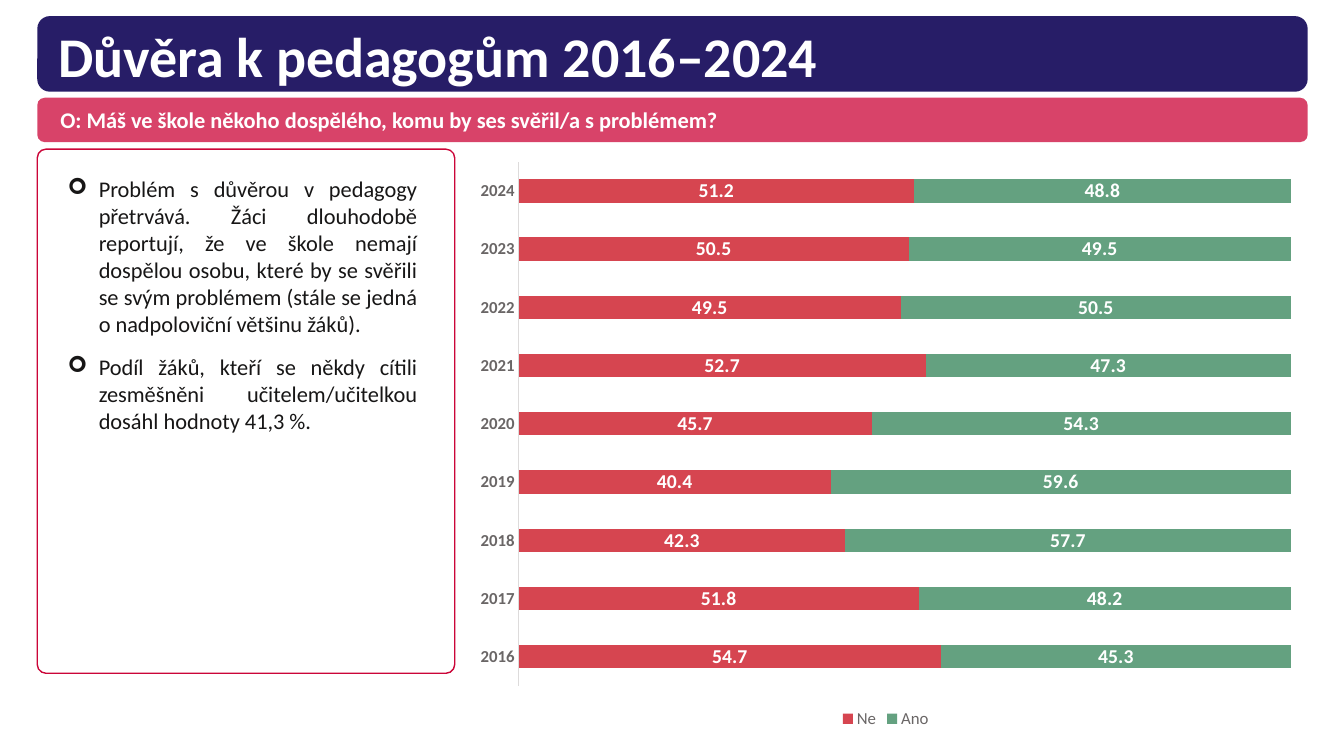
"""Build the slide on pupils' trust in teachers, 2016–2024."""
from lxml import etree
from pptx import Presentation
from pptx.chart.data import CategoryChartData
from pptx.dml.color import RGBColor
from pptx.enum import chart as charts, shapes, text
from pptx.oxml.ns import qn
from pptx.util import Inches, Pt

NAVY = RGBColor(0x27, 0x1D, 0x67)
CRIMSON = RGBColor(0xCB, 0x05, 0x38)
WHITE = RGBColor(0xFF, 0xFF, 0xFF)
INK = RGBColor(0x17, 0x16, 0x16)
GREY = RGBColor(0x6A, 0x66, 0x66)
AXIS_GREY = RGBColor(0xDD, 0xDB, 0xDB)
RED = RGBColor(0xD6, 0x45, 0x50)
GREEN = RGBColor(0x64, 0xA1, 0x80)

YEARS = range(2016, 2025)
ANSWERS = [
    ("Ne", RED, [54.7, 51.8, 42.3, 40.4, 45.7, 52.7, 49.5, 50.5, 51.2]),
    ("Ano", GREEN, [45.3, 48.2, 57.7, 59.6, 54.3, 47.3, 50.5, 49.5, 48.8]),
]
FINDINGS = [
    "Problém s důvěrou v pedagogy přetrvává. Žáci dlouhodobě reportují, že ve škole "
    "nemají dospělou osobu, které by se svěřili se svým problémem (stále se jedná "
    "o nadpoloviční většinu žáků).",
    "Podíl žáků, kteří se někdy cítili zesměšněni učitelem/učitelkou dosáhl hodnoty 41,3 %.",
]


def style_font(font, size, color, bold=False):
    font.name, font.size, font.bold = "Calibri", Pt(size), bold
    font.color.rgb = color


def add_panel(top, width, height, fill):
    panel = slide.shapes.add_shape(
        shapes.MSO_SHAPE.ROUNDED_RECTANGLE,
        Inches(0.37), Inches(top), Inches(width), Inches(height))
    panel.shadow.inherit = False
    panel.fill.solid()
    panel.fill.fore_color.rgb = fill
    panel.line.fill.background()
    return panel


presentation = Presentation()
presentation.slide_width, presentation.slide_height = Inches(13.33), Inches(7.5)
slide = presentation.slides.add_slide(presentation.slide_layouts[5])

question_band = add_panel(0.97, 12.6, 0.44, CRIMSON)
band_color = question_band.fill._xPr.find(qn("a:solidFill"))[0]
etree.SubElement(band_color, qn("a:alpha"), val="75000")
add_panel(0.16, 12.6, 0.75, NAVY)
findings_panel = add_panel(1.48, 4.14, 5.2, WHITE)
findings_panel.adjustments[0] = 0.021
findings_panel.line.color.rgb = CRIMSON
findings_panel.line.width = Pt(1)

title = slide.shapes.title
slide.shapes._spTree.append(title._element)
title.left, title.top, title.width, title.height = map(Inches, (0.48, 0.24, 11.5, 0.54))
title.text_frame.text = "Důvěra k pedagogům 2016–2024"
title.text_frame.vertical_anchor = text.MSO_ANCHOR.TOP
title.text_frame.auto_size = text.MSO_AUTO_SIZE.NONE
paragraph = title.text_frame.paragraphs[0]
paragraph.alignment = text.PP_ALIGN.LEFT
paragraph.line_spacing = 0.9
style_font(paragraph.font, 40, WHITE, True)

question = slide.shapes.add_textbox(Inches(0.5), Inches(1.05), Inches(10), Inches(0.3))
question.text_frame.word_wrap = True
question.text_frame.vertical_anchor = text.MSO_ANCHOR.MIDDLE
paragraph = question.text_frame.paragraphs[0]
paragraph.text = "O: Máš ve škole někoho dospělého, komu by ses svěřil/a s problémem?"
paragraph.line_spacing = 0.9
style_font(paragraph.font, 16, WHITE, True)

findings = slide.shapes.add_textbox(Inches(0.47), Inches(1.54), Inches(3.87), Inches(5.07))
frame = findings.text_frame
frame.word_wrap = True
frame.margin_left = frame.margin_top = frame.margin_right = Inches(0.2)
frame.margin_bottom = Inches(0.39)
for index, finding in enumerate(FINDINGS):
    paragraph = frame.add_paragraph() if index else frame.paragraphs[0]
    paragraph.text = finding
    paragraph.alignment = text.PP_ALIGN.JUSTIFY
    if index:
        paragraph.space_before = Pt(12)
    properties = paragraph._p.get_or_add_pPr()
    properties.set("marL", str(Inches(0.31)))
    properties.set("indent", str(-Inches(0.31)))
    etree.SubElement(properties, qn("a:buFont"), typeface="Wingdings")
    etree.SubElement(properties, qn("a:buChar"), char="➢")
    style_font(paragraph.font, 16, INK)

chart_data = CategoryChartData(number_format="0.0")
chart_data.categories = [str(year) for year in YEARS]
for name, _, values in ANSWERS:
    chart_data.add_series(name, values)
chart = slide.shapes.add_chart(
    charts.XL_CHART_TYPE.BAR_STACKED,
    Inches(4.6), Inches(1.49), Inches(8.37), Inches(5.78), chart_data).chart
style_font(chart.font, 10, INK)
chart.has_title = False
chart.has_legend = True
chart.legend.position = charts.XL_LEGEND_POSITION.BOTTOM
chart.legend.include_in_layout = False
style_font(chart.legend.font, 12, GREY)

year_axis = chart.category_axis
year_axis.major_tick_mark = charts.XL_TICK_MARK.NONE
year_axis.format.line.color.rgb = AXIS_GREY
year_axis.format.line.width = Pt(0.75)
style_font(year_axis.tick_labels.font, 12, GREY, True)
chart.value_axis.visible = False
chart.value_axis.has_major_gridlines = False
chart.value_axis.minimum_scale, chart.value_axis.maximum_scale = 0, 100

plot = chart.plots[0]
plot.gap_width, plot.overlap = 150, 100
plot.vary_by_categories = False
for series, (_, color, _) in zip(plot.series, ANSWERS):
    series.format.fill.solid()
    series.format.fill.fore_color.rgb = color
    labels = series.data_labels
    labels.show_value = True
    labels.position = charts.XL_LABEL_POSITION.CENTER
    style_font(labels.font, 14, WHITE, True)

presentation.save("out.pptx")
